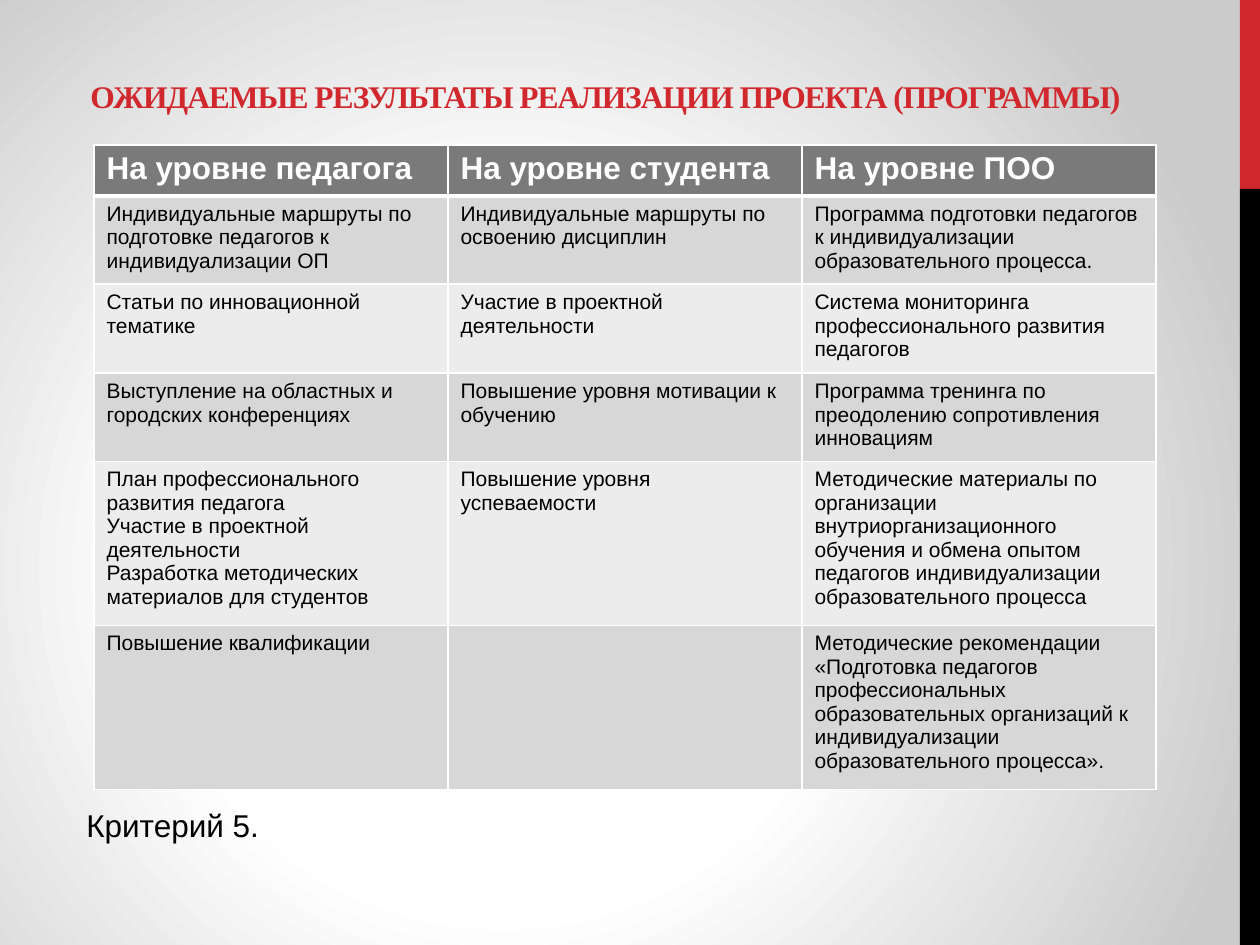
from lxml import etree
from pptx import Presentation
from pptx.dml.color import RGBColor
from pptx.enum.shapes import MSO_SHAPE
from pptx.enum.text import MSO_ANCHOR, MSO_AUTO_SIZE, PP_ALIGN
from pptx.oxml import parse_xml
from pptx.oxml.ns import nsdecls, qn
from pptx.util import Pt

PX = 914400 // 126  # EMU per pixel

RED = RGBColor(0xD1, 0x28, 0x2E)
BLACK = RGBColor(0x00, 0x00, 0x00)
WHITE = RGBColor(0xFF, 0xFF, 0xFF)
EDGE_GRAY = RGBColor(0xCB, 0xCB, 0xCB)
HEADER_GRAY = RGBColor(0x7A, 0x7A, 0x7A)
BANDS = [RGBColor(0xD7, 0xD7, 0xD7), RGBColor(0xEC, 0xEC, 0xEC)]

COLUMN_WIDTH = 354
ROW_HEIGHTS = [51, 88, 89, 88, 164, 164]
RESULTS = [
    ["На уровне педагога", "На уровне студента", "На уровне ПОО"],
    ["Индивидуальные маршруты по подготовке педагогов к индивидуализации ОП",
     "Индивидуальные маршруты по освоению дисциплин",
     "Программа подготовки педагогов к индивидуализации образовательного процесса."],
    ["Статьи по инновационной тематике",
     "Участие в проектной деятельности",
     "Система мониторинга профессионального развития педагогов"],
    ["Выступление на областных и городских конференциях",
     "Повышение уровня мотивации к обучению",
     "Программа тренинга по преодолению сопротивления инновациям"],
    ["План профессионального развития педагога\n"
     "Участие в проектной деятельности\n"
     "Разработка методических материалов для студентов",
     "Повышение уровня успеваемости",
     "Методические материалы по организации внутриорганизационного обучения "
     "и обмена опытом педагогов индивидуализации образовательного процесса"],
    ["Повышение квалификации",
     "",
     "Методические рекомендации «Подготовка педагогов профессиональных "
     "образовательных организаций к индивидуализации образовательного процесса»."],
]


def px(*lengths):
    return [length * PX for length in lengths]


def set_background(slide):
    """Radial gradient, white in the middle and gray at the edges."""
    slide.background.fill.gradient()
    stops = "".join(
        f'<a:gs pos="{percent * 1000}"><a:srgbClr val="{color}"/></a:gs>'
        for percent, color in [(0, WHITE), (44, WHITE), (100, EDGE_GRAY)])
    radial = parse_xml(
        f'<a:gradFill {nsdecls("a")} rotWithShape="1"><a:gsLst>{stops}</a:gsLst>'
        '<a:path path="circle">'
        '<a:fillToRect l="40000" t="60000" r="60000" b="40000"/>'
        '</a:path></a:gradFill>')
    linear = slide.element.find(".//" + qn("a:gradFill"))
    linear.getparent().replace(linear, radial)


def add_bar(slide, top, height, color):
    bar = slide.shapes.add_shape(MSO_SHAPE.RECTANGLE, *px(1240, top, 20, height))
    bar.shadow.inherit = False
    bar.fill.solid()
    bar.fill.fore_color.rgb = color
    bar.line.fill.background()


def style_text(frame, size, color, font="Arial", bold=False):
    for paragraph in frame.paragraphs:
        for run in paragraph.runs:
            run.font.name = font
            run.font.size = Pt(size)
            run.font.bold = bold
            run.font.color.rgb = color


def add_title(slide, text):
    frame = slide.shapes.add_textbox(*px(44, 26, 1123, 95)).text_frame
    frame.word_wrap = True
    frame.vertical_anchor = MSO_ANCHOR.BOTTOM
    frame.text = text
    frame.paragraphs[0].alignment = PP_ALIGN.CENTER
    style_text(frame, 18, RED, "Times New Roman", True)
    # Tightened letter spacing, in hundredths of a point
    frame.paragraphs[0].runs[0].font._element.set("spc", "-60")


def add_caption(slide, text):
    frame = slide.shapes.add_textbox(*px(74, 800, 199, 50)).text_frame
    frame.word_wrap = False
    frame.auto_size = MSO_AUTO_SIZE.SHAPE_TO_FIT_TEXT
    frame.text = text
    style_text(frame, 18, BLACK)


def set_borders(cell, top, bottom):
    properties = cell._tc.get_or_add_tcPr()
    widths = [("lnL", 1), ("lnR", 1), ("lnT", top), ("lnB", bottom)]
    for index, (side, width) in enumerate(widths):
        line = etree.Element(qn(f"a:{side}"), w=str(Pt(width)))
        fill = etree.SubElement(line, qn("a:solidFill"))
        etree.SubElement(fill, qn("a:srgbClr"), val=str(WHITE))
        properties.insert(index, line)


def add_results_table(slide):
    columns = len(RESULTS[0])
    table = slide.shapes.add_table(
        len(RESULTS), columns,
        *px(94, 145, COLUMN_WIDTH * columns, sum(ROW_HEIGHTS))).table
    table.horz_banding = False
    for column in table.columns:
        column.width = COLUMN_WIDTH * PX
    for row, height in enumerate(ROW_HEIGHTS):
        table.rows[row].height = height * PX
        header = row == 0
        for column, text in enumerate(RESULTS[row]):
            cell = table.cell(row, column)
            cell.text_frame.text = text
            style_text(cell.text_frame, 18 if header else 12,
                       WHITE if header else BLACK, bold=header)
            cell.fill.solid()
            cell.fill.fore_color.rgb = HEADER_GRAY if header else BANDS[(row - 1) % 2]
            # Thick rule between the header and the first body row
            set_borders(cell, top=3 if row == 1 else 1, bottom=3 if header else 1)


def main():
    presentation = Presentation()
    presentation.slide_width, presentation.slide_height = px(1260, 945)
    slide = presentation.slides.add_slide(presentation.slide_layouts[6])

    # Background and side bars
    set_background(slide)
    add_bar(slide, 0, 189, RED)
    add_bar(slide, 189, 756, BLACK)

    # Content
    add_title(slide, "ОЖИДАЕМЫЕ РЕЗУЛЬТАТЫ РЕАЛИЗАЦИИ ПРОЕКТА (ПРОГРАММЫ)")
    add_caption(slide, "Критерий 5.")
    add_results_table(slide)

    presentation.save("out.pptx")


if __name__ == "__main__":
    main()
